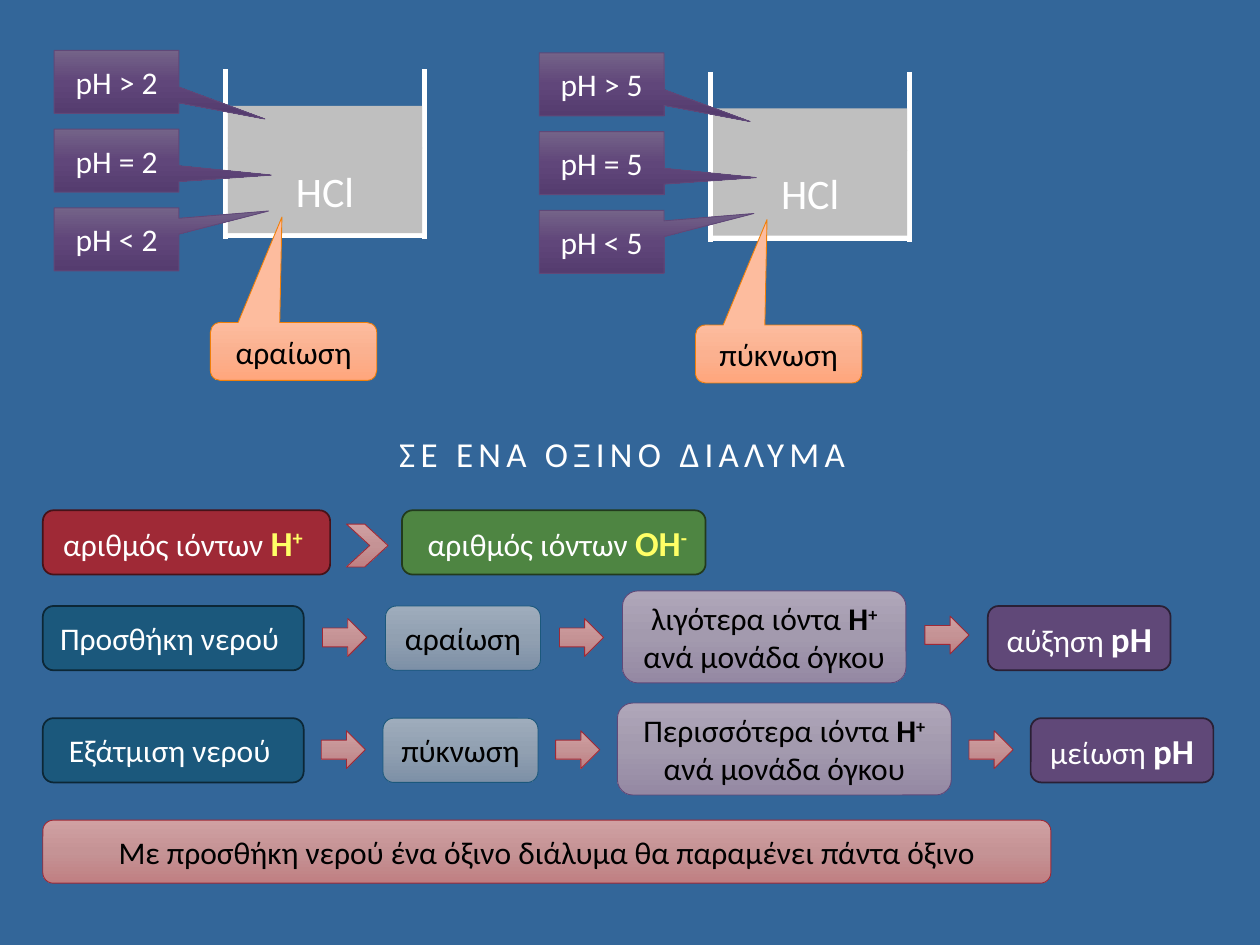
import copy
import pptx
import pptx.dml.color
import pptx.enum.shapes
import pptx.enum.text
import pptx.oxml.ns
import pptx.util

Inches = pptx.util.Inches
Pt = pptx.util.Pt
RGBColor = pptx.dml.color.RGBColor
Kind = pptx.enum.shapes.MSO_SHAPE
Align = pptx.enum.text.PP_ALIGN
qn = pptx.oxml.ns.qn

BACK = RGBColor(0x33, 0x66, 0x99)
WHITE = RGBColor(0xFF, 0xFF, 0xFF)
BLACK = RGBColor(0x00, 0x00, 0x00)
YELLOW = RGBColor(0xFF, 0xFF, 0x66)
GRAY = RGBColor(0xBF, 0xBF, 0xBF)
RED = RGBColor(0x9F, 0x29, 0x36)
MAROON = RGBColor(0x46, 0x12, 0x18)
GREEN = RGBColor(0x4E, 0x85, 0x42)
FOREST = RGBColor(0x22, 0x3A, 0x1D)
BLUE = RGBColor(0x1B, 0x58, 0x7C)
NAVY = RGBColor(0x0C, 0x27, 0x36)
PURPLE = RGBColor(0x60, 0x48, 0x78)
PLUM = RGBColor(0x2A, 0x20, 0x35)
ORANGE = RGBColor(0xF0, 0x7F, 0x09)
ROSE = [RGBColor(0xD0, 0xA0, 0xA2), RGBColor(0xC5, 0x93, 0x95), RGBColor(0xC0, 0x7F, 0x82)]
STEEL = [RGBColor(0x9E, 0xAC, 0xBC), RGBColor(0x91, 0xA0, 0xB1), RGBColor(0x7D, 0x90, 0xA7)]
LILAC = [RGBColor(0xAF, 0xA6, 0xB9), RGBColor(0xA3, 0x9A, 0xAE), RGBColor(0x94, 0x88, 0xA3)]
GRAPE = [RGBColor(0x74, 0x63, 0x88), RGBColor(0x60, 0x46, 0x7A), RGBColor(0x55, 0x3C, 0x6F)]
PEACH = [RGBColor(0xFD, 0xBC, 0x9E), RGBColor(0xFB, 0xB1, 0x90), RGBColor(0xFF, 0xA6, 0x7C)]


class Board:
    font = "Calibri"

    def __init__(self, slide):
        self.slide = slide
        slide.background.fill.solid()
        slide.background.fill.fore_color.rgb = BACK

    def paint(self, shape, fill):
        if isinstance(fill, RGBColor):
            shape.fill.solid()
            shape.fill.fore_color.rgb = fill
            return
        shape.fill.gradient()
        shape.fill.gradient_angle = 270
        stops = shape._element.spPr.find(".//" + qn("a:gsLst"))
        middle = copy.deepcopy(stops[0])
        middle.set("pos", "50000")
        stops.insert(1, middle)
        for stop, color in zip(shape.fill.gradient_stops, fill):
            stop.color.rgb = color

    def label(self, frame, parts, ink, size=18, strong=18, hot=None):
        line = frame.paragraphs[0]
        for text, mark in parts:
            run = line.add_run()
            run.text = text
            run.font.name = self.font
            run.font.size = Pt(strong if mark else size)
            run.font.bold = bool(mark)
            run.font.color.rgb = hot if mark and hot else ink
            if mark == "sup":
                run.font._element.set("baseline", "30000")
        return line

    def box(self, kind, at, fill, edge=None, parts=(), ink=WHITE, adj=(), **style):
        shape = self.slide.shapes.add_shape(kind, *map(Inches, at))
        shape.shadow.inherit = False
        self.paint(shape, fill)
        if edge is None:
            shape.line.fill.background()
        else:
            shape.line.color.rgb = edge
            shape.line.width = Pt(1 if isinstance(fill, RGBColor) else 0.5)
        for spot, value in enumerate(adj):
            shape.adjustments[spot] = value
        if isinstance(parts, str):
            parts = [(parts, "")]
        shape.text_frame.vertical_anchor = pptx.enum.text.MSO_ANCHOR.MIDDLE
        self.label(shape.text_frame, parts, ink, **style).alignment = Align.CENTER

    def card(self, at, fill, edge, parts, **style):
        self.box(Kind.ROUNDED_RECTANGLE, at, fill, edge, parts, **style)

    def arrow(self, left, top):
        self.box(Kind.RIGHT_ARROW, (left, top, 0.35, 0.3), ROSE, RED)

    def title(self, at, text):
        frame = self.slide.shapes.add_textbox(*map(Inches, at)).text_frame
        frame.word_wrap = True
        line = self.label(frame, [(text, "")], WHITE, size=20)
        line.runs[0].font._element.set("spc", "300")

    def walls(self, ends):
        group = self.slide.shapes.add_group_shape()
        for points in ends:
            wall = group.shapes.add_connector(
                pptx.enum.shapes.MSO_CONNECTOR.STRAIGHT, *map(Inches, points))
            wall.line.color.rgb = WHITE
            wall.line.width = Pt(3)
            props = wall._element.spPr
            props.append(props.makeelement(qn("a:effectLst"), {}))

    def beaker(self, x, y, value, change):
        left, right, top, base = x + 1.36, x + 2.94, y + 0.15, y + 1.5
        self.walls([(left, top, left, base), (right, top, right, base),
                    (left, base - 0.03, right - 0.02, base - 0.03)])
        self.box(Kind.RECTANGLE, (x + 1.38, y + 0.77, 1.54, 0.68), GRAY, parts="HCl", size=24)
        self.box(Kind.RECTANGLE, (x + 1.38, y + 0.44, 1.54, 0.34), GRAY)
        signs = [(">", 1.19, 0.59), ("=", 1.24, 0.23), ("<", 1.22, -0.45)]
        for row, (sign, *tip) in enumerate(signs):
            self.box(Kind.RECTANGULAR_CALLOUT, (x, y + row * 0.625, 0.99, 0.5),
                     GRAPE, PURPLE, f"pH {sign} {value}", adj=tip)
        self.box(Kind.ROUNDED_RECTANGULAR_CALLOUT, (x + 1.24, y + 2.16, 1.32, 0.46),
                 PEACH, ORANGE, change, BLACK, (-0.07, -2.32, 0.17))

    def chain(self, y, start, step, fewer, trend, lefts, wide):
        self.card((0.34, y, 2.07, 0.51), BLUE, NAVY, start)
        self.card((lefts[0], y, 1.23, 0.51), STEEL, BLUE, step, ink=BLACK)
        ions = [(fewer + " ιόντα ", ""), ("H", "bold"), ("+", "sup"), (" ανά μονάδα όγκου", "")]
        self.card((lefts[1], y - 0.12, wide, 0.73), LILAC, PURPLE, ions, ink=BLACK)
        self.card((lefts[2], y, 1.45, 0.51), PURPLE, PLUM,
                  [(trend + " ", ""), ("pH", "bold")], strong=20)


def main():
    deck = pptx.Presentation()
    deck.slide_width, deck.slide_height = Inches(10), Inches(7.5)
    board = Board(deck.slides.add_slide(deck.slide_layouts[6]))

    board.card((0.34, 4.05, 2.28, 0.51), RED, MAROON,
               [("αριθμός ιόντων ", ""), ("H", "bold"), ("+", "sup"), (" ", "")],
               strong=20, hot=YELLOW)
    board.card((3.19, 4.05, 2.41, 0.51), GREEN, FOREST,
               [(" αριθμός ιόντων ", ""), ("OH", "bold"), ("-", "sup")],
               strong=20, hot=YELLOW)
    board.box(Kind.CHEVRON, (2.75, 4.16, 0.33, 0.34), ROSE, RED, adj=[0.56])

    board.chain(4.81, "Προσθήκη νερού ", "αραίωση", "λιγότερα", "αύξηση",
                (3.06, 4.94, 7.84), 2.25)
    board.chain(5.7, "Εξάτμιση νερού ", "πύκνωση", "Περισσότερα", "μείωση",
                (3.04, 4.9, 8.18), 2.65)
    for left, top in [(2.56, 4.91), (4.44, 4.91), (7.34, 4.89),
                      (2.55, 5.8), (4.41, 5.8), (7.69, 5.8)]:
        board.arrow(left, top)

    board.card((0.34, 6.51, 8, 0.5), ROSE, RED,
               "Με προσθήκη νερού ένα όξινο διάλυμα θα παραμένει πάντα όξινο", ink=BLACK)
    board.title((3.07, 3.38, 4.01, 0.44), "ΣΕ ΕΝΑ ΟΞΙΝΟ ΔΙΑΛΥΜΑ")
    board.beaker(0.43, 0.4, 2, "αραίωση")
    board.beaker(4.28, 0.42, 5, "πύκνωση")
    deck.save("out.pptx")


if __name__ == "__main__":
    main()
